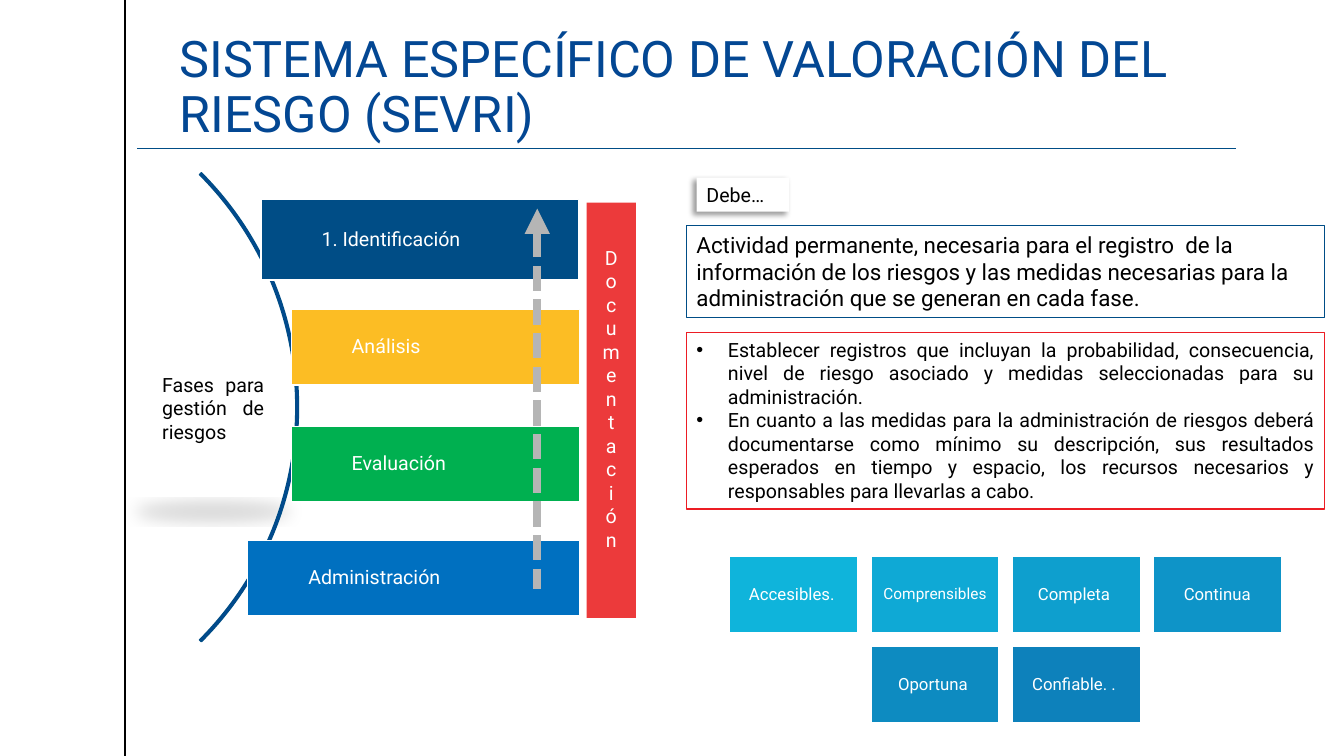
from lxml import etree
from pptx import Presentation, util as u
from pptx.dml.color import RGBColor
from pptx.enum import dml, shapes, text
from pptx.oxml.ns import qn

Pt = u.Pt
FONT = "Roboto"
NAVY, WHITE, BLACK = "004D86", "FFFFFF", "000000"
LEFT, CENTER, JUSTIFY = text.PP_ALIGN.LEFT, text.PP_ALIGN.CENTER, text.PP_ALIGN.JUSTIFY
TOP, MIDDLE, BOTTOM = text.MSO_ANCHOR.TOP, text.MSO_ANCHOR.MIDDLE, text.MSO_ANCHOR.BOTTOM
RECT, OVAL = shapes.MSO_SHAPE.RECTANGLE, shapes.MSO_SHAPE.OVAL

TITLE = "SISTEMA ESPECÍFICO DE VALORACIÓN DEL RIESGO (SEVRI)"
PHASES_LABEL = "Fases para gestión de riesgos "
PHASES = [  # text, fill, left, top, width, height
    ("1. Identificación", NAVY, 186.5, 142.6, 226.8, 57.4),
    ("Análisis", "FCBD24", 208, 221, 206, 54),
    ("Evaluación", "00B050", 208, 304.6, 206, 54),
    ("Administración", "0070C0", 177, 386, 237, 54),
]
DOCUMENTATION = "Documentación "
DUTY_LABEL = "Debe…"
DEFINITION = ("Actividad permanente, necesaria para el registro  de la información de los "
              "riesgos y las medidas necesarias para la administración que se generan en cada fase.")
DUTIES = [
    "Establecer registros que incluyan la probabilidad, consecuencia, nivel de riesgo "
    "asociado y medidas seleccionadas para su administración.",
    "En cuanto a las medidas para la administración de riesgos deberá documentarse como "
    "mínimo su descripción, sus resultados esperados en tiempo y espacio, los recursos "
    "necesarios y responsables para llevarlas a cabo.",
]
QUALITIES = [  # rows of text, fill, size
    [("Accesibles. ", "0FB4DB", 12), ("Comprensibles", "0FA9D5", 11),
     ("Completa ", "0E9FCE", 12), ("Continua", "0E94C8", 12)],
    [("Oportuna ", "0D8BC1", 12), ("Confiable. . ", "0D81BB", 12)],
]
QUALITY_LEFT, QUALITY_TOP = 521.3, 397.4
QUALITY_WIDTH, QUALITY_HEIGHT = 91.6, 54.9
COLUMN_STEP, ROW_STEP = 100.8, 64.1
BOX_LEFT, BOX_WIDTH = 490.4, 455.6


def rgb(value):
    return RGBColor.from_string(value)


def write(shape, paragraphs, size, color, align=LEFT, anchor=TOP,
          insets=(7.2, 3.6, 7.2, 3.6), spacing=None, bullet=None):
    frame = shape.text_frame
    left, top, right, bottom = map(Pt, insets)
    settings = {"word_wrap": True, "vertical_anchor": anchor, "margin_left": left,
                "margin_top": top, "margin_right": right, "margin_bottom": bottom}
    for name, value in settings.items():
        setattr(frame, name, value)
    for index, content in enumerate(paragraphs):
        paragraph = frame.paragraphs[0] if index == 0 else frame.add_paragraph()
        paragraph.alignment = align
        if spacing:
            paragraph.line_spacing = spacing
        if bullet:
            properties = paragraph._p.get_or_add_pPr()
            properties.set("marL", str(Pt(22.5)))
            properties.set("indent", str(-Pt(22.5)))
            etree.SubElement(properties, qn("a:buFont"), typeface="Arial")
            etree.SubElement(properties, qn("a:buChar"), char=bullet)
        run = paragraph.add_run()
        run.text = content
        for name, value in {"name": FONT, "size": Pt(size)}.items():
            setattr(run.font, name, value)
        run.font.color.rgb = rgb(color)


def add_block(kind, box, fill=None, line=None, width=1):
    shape = slide.shapes.add_shape(kind, *map(Pt, box))
    shape.shadow.inherit = False
    if fill:
        shape.fill.solid()
        shape.fill.fore_color.rgb = rgb(fill)
    else:
        shape.fill.background()
    if line:
        shape.line.color.rgb = rgb(line)
        shape.line.width = Pt(width)
    else:
        shape.line.fill.background()
    return shape


def add_line(start, end, color, width):
    line = slide.shapes.add_connector(shapes.MSO_CONNECTOR.STRAIGHT, *map(Pt, start + end))
    line.line.color.rgb = rgb(color)
    line.line.width = Pt(width)
    etree.SubElement(line._element.spPr, qn("a:effectLst"))
    return line


def cast_shadow(shape, blur, distance, degrees, alpha, **options):
    effects = shape._element.spPr.find(qn("a:effectLst"))
    shadow = etree.SubElement(effects, qn("a:outerShdw"), blurRad=str(Pt(blur)),
                              dist=str(Pt(distance)), dir=str(degrees * 60000),
                              rotWithShape="0", **options)
    color = etree.SubElement(shadow, qn("a:srgbClr"), val=BLACK)
    etree.SubElement(color, qn("a:alpha"), val=str(alpha * 1000))


deck = Presentation()
deck.slide_width, deck.slide_height = Pt(960), Pt(540)
slide = deck.slides.add_slide(deck.slide_layouts[5])

# Title and rules
title = slide.shapes.title
title_box = {"left": 128.2, "top": 26.6, "width": 797.8, "height": 79.2}
for side, length in title_box.items():
    setattr(title, side, Pt(length))
write(title, [TITLE], 36, "034793", anchor=BOTTOM, insets=(0, 3.6, 0, 3.6), spacing=0.9)
title.text_frame.auto_size = text.MSO_AUTO_SIZE.NONE
add_line((89.3, 0), (89.3, 540), BLACK, 1)
add_line((97.9, 105.9), (882.7, 105.9), NAVY, 0.5)

# Phases along the arc
phases_label = add_block(OVAL, (90.7, 250.6, 123.1, 82.1), WHITE)
cast_shadow(phases_label, 12, 25, 90, 15, sx="90000", sy="-19000")
write(phases_label, [PHASES_LABEL], 14, BLACK, JUSTIFY)
arc = add_block(shapes.MSO_SHAPE.BLOCK_ARC, (-260.6, 54, 473.8, 473.8), "034793", NAVY)
for index, value in enumerate((189, 27, 0.004)):
    arc.adjustments[index] = value
for name, fill, *box in PHASES:
    phase = add_block(RECT, box, fill, WHITE)
    write(phase, [name], 14, WHITE, anchor=MIDDLE, insets=(43.2, 2.9, 2.9, 2.9), spacing=0.9)

# Definition and duties
definition = add_block(RECT, (BOX_LEFT, 161.3, BOX_WIDTH, 65.5), line=NAVY, width=0.75)
write(definition, [DEFINITION], 16, BLACK)
duties = add_block(RECT, (BOX_LEFT, 237.6, BOX_WIDTH, 126), line="EC1D24", width=0.75)
write(duties, DUTIES, 14, BLACK, JUSTIFY, bullet="•")
duty_label = add_block(RECT, (497.5, 126.9, 66.2, 24.3), WHITE)
cast_shadow(duty_label, 4, 3, 135, 40, algn="tr")
write(duty_label, [DUTY_LABEL], 14, BLACK)

# Qualities, with each row centred under the longest
columns = max(map(len, QUALITIES))
for row, qualities in enumerate(QUALITIES):
    offset = (columns - len(qualities)) / 2
    for column, (name, fill, size) in enumerate(qualities):
        quality = add_block(RECT, (QUALITY_LEFT + (column + offset) * COLUMN_STEP,
                                   QUALITY_TOP + row * ROW_STEP,
                                   QUALITY_WIDTH, QUALITY_HEIGHT), fill, WHITE)
        write(quality, [name], size, WHITE, CENTER, MIDDLE, (3.6,) * 4, 0.9)

# Documentation arrow and bar
arrow = add_line((383.8, 149), (383.8, 420.5), "B5B5B5", 6)
arrow.line.dash_style = dml.MSO_LINE.SQUARE_DOT
etree.SubElement(arrow.line._get_or_add_ln(), qn("a:headEnd"), type="triangle")
documentation = add_block(RECT, (419, 144.7, 35.3, 296.6), "EC3A3B")
write(documentation, [DOCUMENTATION], 14, WHITE, CENTER, MIDDLE)
documentation.text_frame._txBody.bodyPr.set("vert", "wordArtVert")

deck.save("out.pptx")
